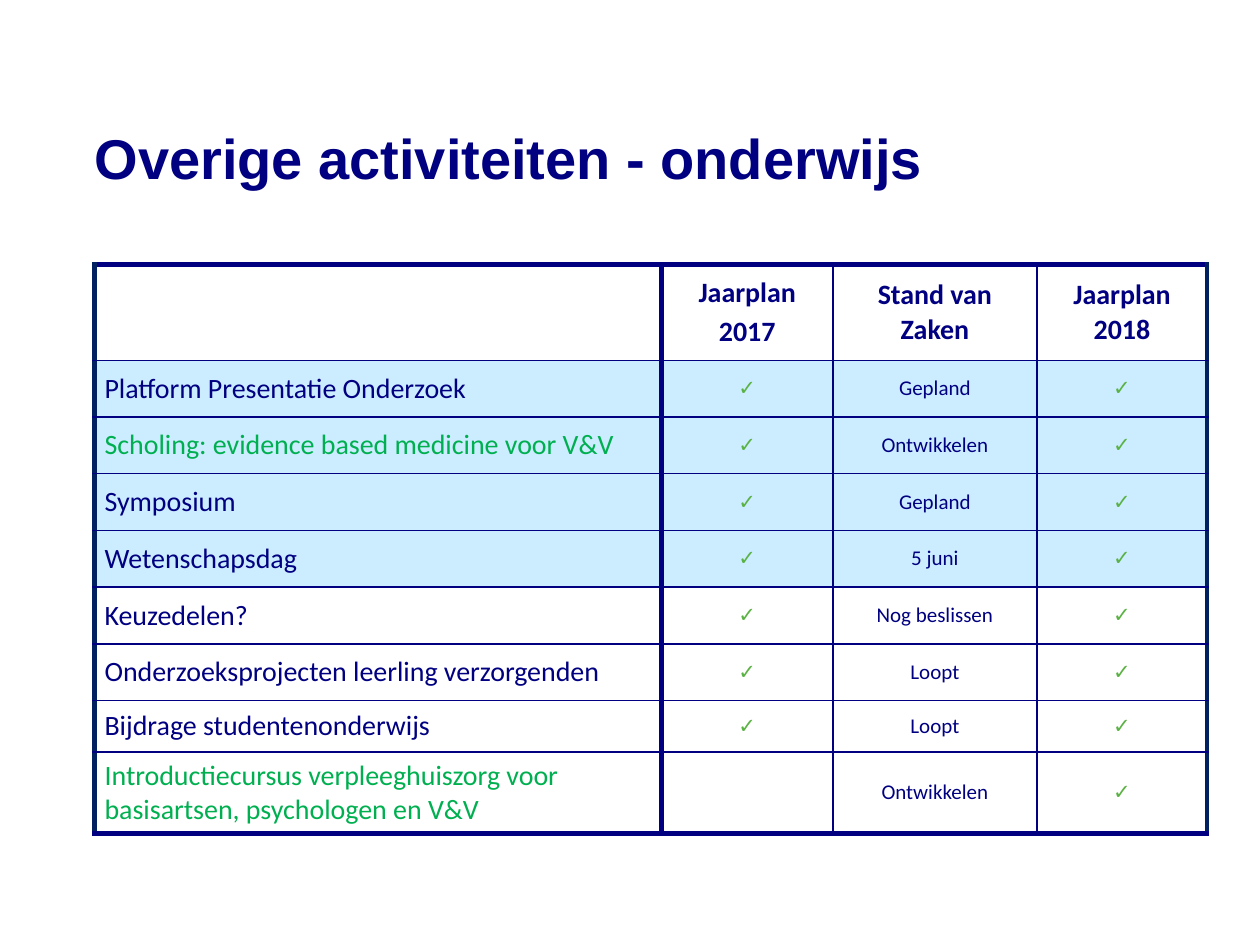
"""Build the slide with the table of other educational activities."""
from lxml.etree import SubElement
from pptx import Presentation
from pptx.dml.color import RGBColor
from pptx.enum.text import MSO_ANCHOR as Anchor, PP_ALIGN as Align
from pptx.oxml.ns import qn
from pptx.util import Inches, Pt

NAVY, DARK, GREEN, TICK = "000080", "002060", "00B050", "5BB244"
PALE, WHITE = "CCECFF", "FFFFFF"


def write_text(frame, text, size=16, font="Calibri", color=NAVY, bold=False, align=Align.CENTER):
    frame.word_wrap = True
    for index, line in enumerate(text.split("\n")):
        para = frame.add_paragraph() if index else frame.paragraphs[0]
        para.alignment = align
        para.space_before = Pt(3 if index else 0)
        span = para.add_run()
        span.text = line
        span.font.name = font
        span.font.size = Pt(size)
        span.font.bold = bold
        span.font.color.rgb = RGBColor.from_string(color)


def add_border(cell, side, color, width):
    line = SubElement(cell._tc.get_or_add_tcPr(), qn(f"a:ln{side}"), w=str(Pt(width)))
    SubElement(SubElement(line, qn("a:solidFill")), qn("a:srgbClr"), val=color)


deck = Presentation()
deck.slide_width, deck.slide_height = Inches(10), Inches(7.5)
page = deck.slides.add_slide(deck.slide_layouts[5])

title = page.shapes.title
title.left, title.top = Inches(0.75), Inches(0.68)
title.width, title.height = Inches(9.37), Inches(1.13)
frame = title.text_frame
frame.margin_left = frame.margin_top = frame.margin_right = frame.margin_bottom = 0
frame.vertical_anchor = Anchor.MIDDLE
write_text(frame, "Overige activiteiten - onderwijs", size=32, font="Arial", bold=True, align=Align.LEFT)

rows = [
    ("", "Jaarplan\n2017", "Stand van Zaken", "Jaarplan 2018"),
    ("Platform Presentatie Onderzoek", "✓", "Gepland", "✓"),
    ("Scholing: evidence based medicine voor V&V", "✓", "Ontwikkelen", "✓"),
    ("Symposium", "✓", "Gepland", "✓"),
    ("Wetenschapsdag", "✓", "5 juni", "✓"),
    ("Keuzedelen?", "✓", "Nog beslissen", "✓"),
    ("Onderzoeksprojecten leerling verzorgenden", "✓", "Loopt", "✓"),
    ("Bijdrage studentenonderwijs", "✓", "Loopt", "✓"),
    ("Introductiecursus verpleeghuiszorg voor basisartsen, psychologen en V&V", "", "Ontwikkelen", "✓"),
]
widths = [4.5, 1.36, 1.62, 1.35]
heights = [0.76] + [0.45] * 6 + [0.41, 0.64]
new_rows = (2, 8)
shaded_rows = range(1, 5)
last_row, last_col = len(rows) - 1, len(widths) - 1

table = page.shapes.add_table(
    len(rows), len(widths), Inches(0.75), Inches(2.1), Inches(sum(widths)), Inches(sum(heights))
).table
table.first_row = table.horz_banding = False
for column, width in zip(table.columns, widths):
    column.width = Inches(width)
for table_row, height in zip(table.rows, heights):
    table_row.height = Inches(height)

for row, texts in enumerate(rows):
    for col, text in enumerate(texts):
        cell = table.cell(row, col)
        cell.vertical_anchor = Anchor.MIDDLE
        cell.margin_left = cell.margin_right = Inches(0.08)
        cell.margin_top = cell.margin_bottom = Inches(0.05)

        add_border(cell, "L", DARK if col == 0 else NAVY, 3 if col < 2 else 1)
        add_border(cell, "R", DARK if col == last_col else NAVY, 3 if col in (0, last_col) else 1)
        add_border(cell, "T", NAVY, 3 if row == 0 else 1)
        add_border(cell, "B", NAVY, 3 if row == last_row else 1)

        if row in shaded_rows or col == 0:
            cell.fill.solid()
            cell.fill.fore_color.rgb = RGBColor.from_string(PALE if row in shaded_rows else WHITE)
        else:
            cell.fill.background()

        if not text:
            continue
        if row == 0:
            style = {"bold": True}
        elif col == 0:
            style = {"color": GREEN if row in new_rows else NAVY, "align": Align.LEFT}
        elif text == "✓":
            style = {"size": 12, "color": TICK, "bold": True}
        else:
            style = {"size": 12}
        write_text(cell.text_frame, text, **style)

deck.save("out.pptx")
